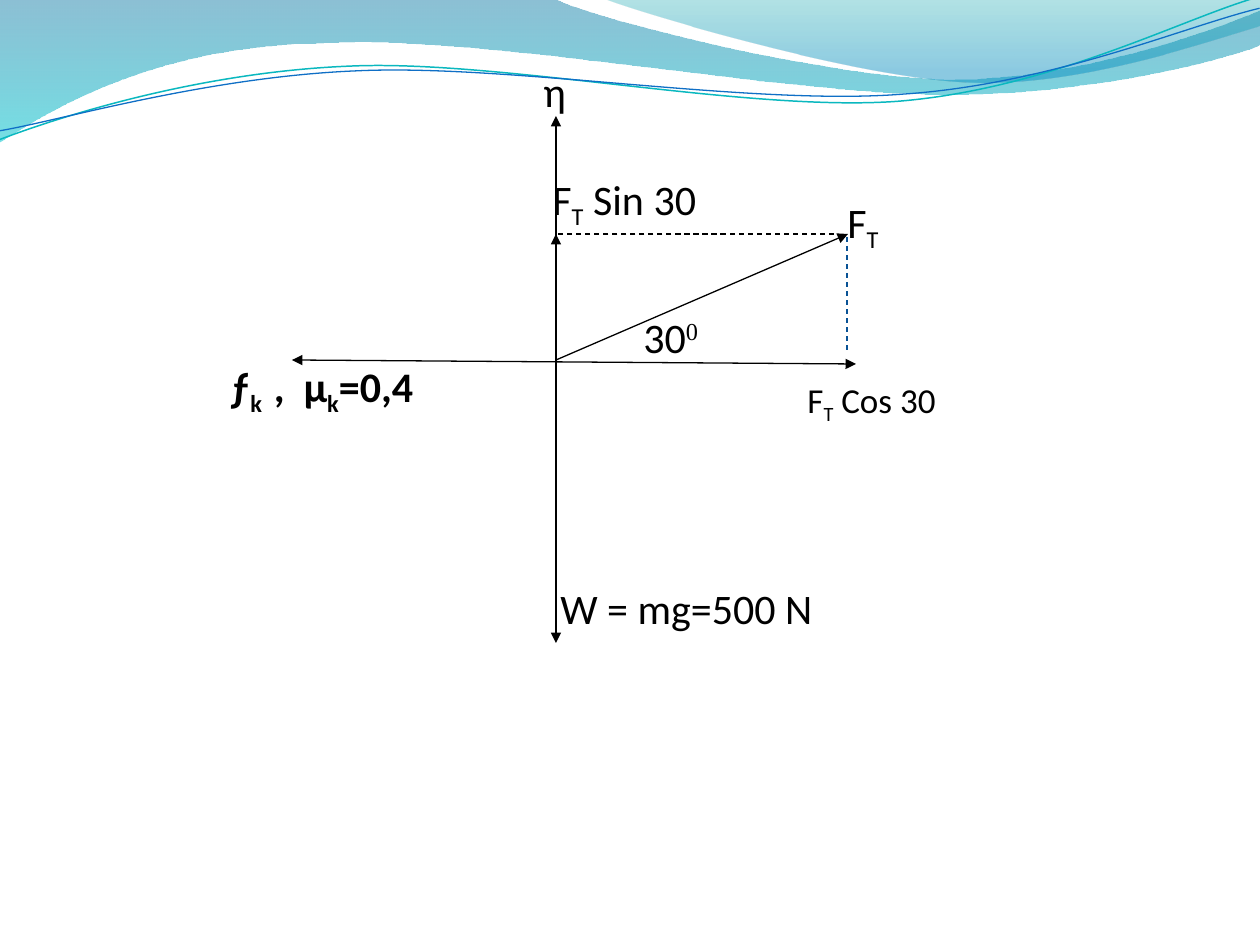
from lxml.etree import SubElement
from pptx import Presentation
from pptx.dml.color import RGBColor
from pptx.enum.dml import MSO_LINE
from pptx.enum.shapes import MSO_CONNECTOR
from pptx.oxml.ns import qn
from pptx.util import Pt

SCALE = 914400 / 126
SUB, SUPER = -25000, 30000


def px(length):
    """Turn pixels into EMU."""
    return round(length * SCALE)


def color(value):
    """Turn a hex string into a colour."""
    return RGBColor.from_string(value)


def bend(shape, segments):
    """Join each run of three corners that belongs to a curve into one cubic."""
    path = next(shape._element.iter(qn("a:path")))
    corners = iter(path.findall(qn("a:lnTo")))
    for segment in segments[1:]:
        corner = next(corners)
        if len(segment) == 6:
            corner.tag = qn("a:cubicBezTo")
            for _ in range(2):
                spare = next(corners)
                corner.append(spare[0])
                path.remove(spare)


def add_outline(page, box, segments, close):
    """Add a freeform of straight (2 numbers) and cubic (6 numbers) segments."""
    left, top = box
    points = [(px(left + x), px(top + y)) for segment in segments
              for x, y in zip(segment[::2], segment[1::2])]
    builder = page.shapes.build_freeform(*points[0], scale=1.0)
    builder.add_line_segments(points[1:], close=close)
    shape = builder.convert_to_shape()
    shape.shadow.inherit = False
    bend(shape, segments)
    return shape


def add_band(page, box, segments, stops):
    """Add a filled wave whose translucent gradient runs downwards."""
    shape = add_outline(page, box, segments, True)
    shape.line.fill.background()
    shape.fill.gradient()
    shape.fill.gradient_angle = 270
    for stop, (position, value, _) in zip(shape.fill.gradient_stops, stops):
        stop.position = position
        stop.color.rgb = color(value)
    for node, (_, _, opacity) in zip(shape._element.iter(qn("a:srgbClr")), stops):
        SubElement(node, qn("a:alpha"), val=str(opacity * 1000))


def add_curve(page, box, segments, value, width):
    """Add an open wave line, tilted a little."""
    shape = add_outline(page, box, segments, False)
    shape.rotation = 357.3
    shape.fill.background()
    shape.line.color.rgb = color(value)
    shape.line.width = Pt(width)


def add_line(page, box, start, end, value="000000", dash=False, arrows=()):
    """Add a straight line with optional dashes and arrowheads."""
    left, top = box
    line = page.shapes.add_connector(
        MSO_CONNECTOR.STRAIGHT, px(left + start[0]), px(top + start[1]),
        px(left + end[0]), px(top + end[1]))
    line.line.color.rgb = color(value)
    line.line.width = Pt(0.75)
    if dash:
        line.line.dash_style = MSO_LINE.DASH
    for arrow in arrows:
        SubElement(line.line._get_or_add_ln(), qn(f"a:{arrow}"), type="triangle")
    SubElement(line._element.spPr, qn("a:effectLst"))


def add_text(page, box, area, spans, size=24, bold=False):
    """Add a label made of spans: text, baseline shift, font and extra spacing."""
    left, top = box
    x, y, width, height = area
    frame = page.shapes.add_textbox(px(left + x), px(top + y), px(width), px(height)).text_frame
    frame.word_wrap = True
    para = frame.paragraphs[0]
    para.space_after = Pt(10)
    for text, shift, font, *spacing in spans:
        span = para.add_run()
        span.text = text
        span.font.name = font
        span.font.size = Pt(size)
        span.font.bold = bold
        span.font.color.rgb = color("000000")
        if shift:
            span.font._element.set("baseline", str(shift))
        if spacing:
            span.font._element.set("spc", str(spacing[0]))


def draw_waves(page, box):
    """Draw the waves along the top edge."""
    add_band(page, box, [
        (0, 0), (554, -1), (600, 21, 837, 79, 955, 79), (1075, 79, 1207, 33, 1260, 11),
        (1261, 45), (1239, 55, 1096, 96, 940, 94), (783, 94, 481, 35, 324, 43),
        (161, 45, 58, 105, -1, 142), (0, 0)], [(0, "0074A1", 45), (1, "00C6CF", 55)])
    add_band(page, box, [
        (604, -1), (641, 14, 859, 78, 969, 82), (1079, 87, 1211, 40, 1260, 26),
        (1260, 0), (604, -1)], [(0, "00A1A9", 30), (0.8, "008BBF", 45)])
    lines = page.shapes.add_group_shape()
    add_curve(lines, box, [
        (-3, 110), (58, 90, 199, 52, 350, 53), (499, 53, 745, 118, 896, 114),
        (1049, 109, 1184, 45, 1260, 27)], "0AB8BF", 0.85)
    add_curve(lines, box, [
        (-2, 101), (57, 94, 207, 57, 357, 58), (509, 58, 750, 112, 902, 107),
        (1052, 104, 1188, 52, 1262, 38)], "0F6FC6", 0.75)


def draw_forces(page, box):
    """Draw the force diagram with its labels."""
    group = page.shapes.add_group_shape()
    origin, vertical = (339, 301), (339, 175)
    both, end = ("headEnd", "tailEnd"), ("tailEnd",)
    add_line(group, box, (339, 57), (339, 584), arrows=both)
    add_line(group, box, (75, 301), (639, 305), arrows=both)
    add_line(group, box, origin, (631, 175), arrows=end)

    body = "Calibri"
    tension = [("F", 0, body), ("T", SUB, body)]
    add_text(group, box, (618, 131, 125, 122), tension)
    add_line(group, box, (617, 175), vertical, dash=True)
    add_text(group, box, (578, 313, 248, 74), tension + [(" Cos 30", 0, body)], size=20)
    add_line(group, box, origin, vertical, arrows=end)
    add_text(group, box, (323, 108, 248, 74), tension + [(" Sin 30", 0, body)])
    add_text(group, box, (414, 246, 120, 73),
             [("30", 0, body), ("0", SUPER, "Times New Roman")])
    add_text(group, box, (314, 0, 91, 87), [("η", 0, body)])
    add_text(group, box, (331, 517, 328, 74), [("W = mg=500 N", 0, body)])
    add_text(group, box, (0, 295, 238, 107), [
        ("ƒ", 0, body), ("k", SUB, body), (" ", SUB, body, 360), (",", 0, body),
        (" ", 0, body, 540), ("μ", 0, body), ("k", SUB, body), ("=0,4", 0, body)],
        bold=True)
    add_line(page, box, (630, 178), (630, 295), "095295", dash=True)


def main():
    """Build and save the deck."""
    deck = Presentation()
    deck.slide_width, deck.slide_height = px(1260), px(945)
    page = deck.slides.add_slide(deck.slide_layouts[6])
    page.background.fill.solid()
    page.background.fill.fore_color.rgb = color("FFFFFF")
    draw_waves(page, (0, 0))
    draw_forces(page, (217, 59))
    deck.save("out.pptx")


if __name__ == "__main__":
    main()
